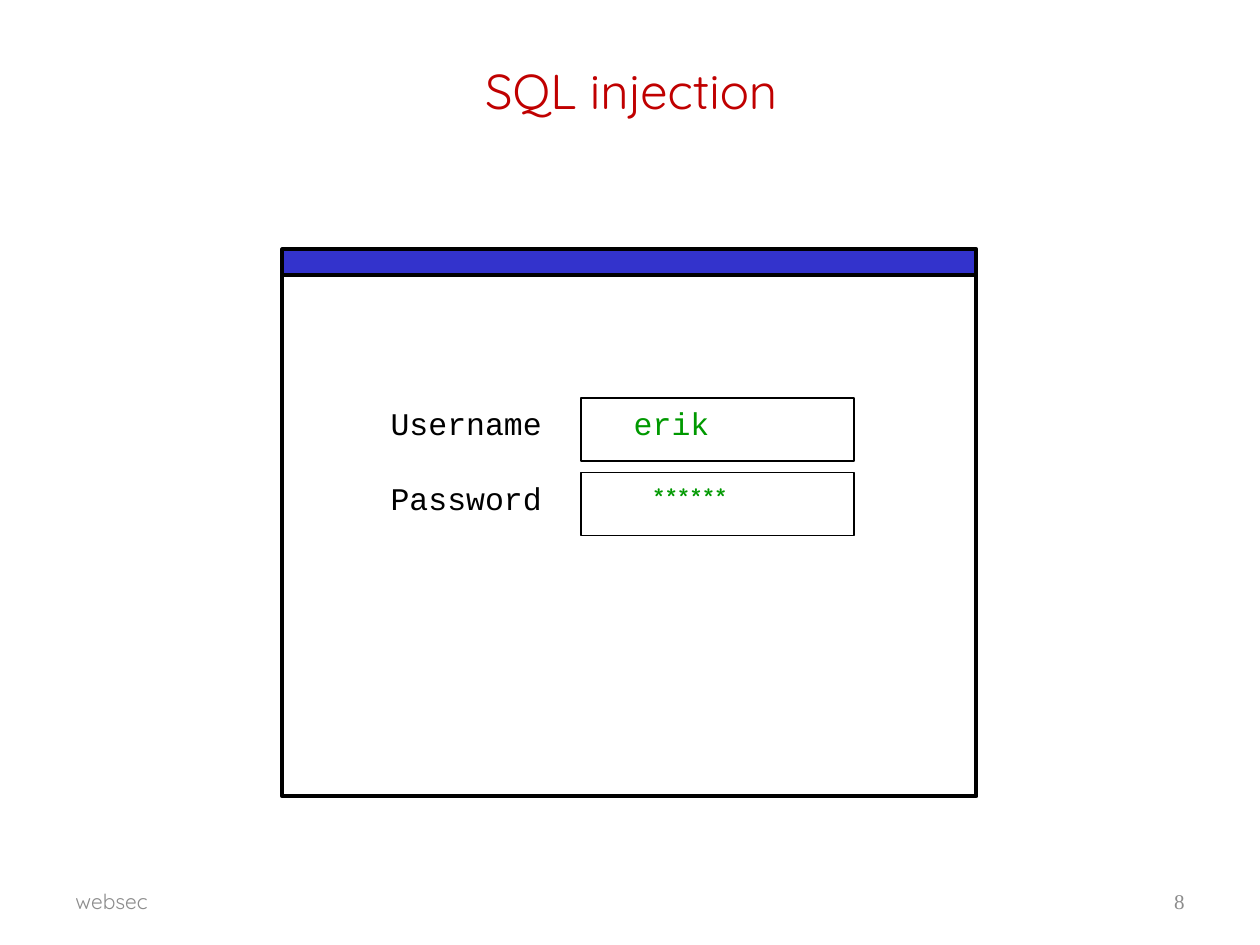
from pptx import Presentation
from pptx.dml.color import RGBColor
from pptx.enum import shapes, text
from pptx.util import Inches, Pt

BLACK, GREY, GREEN = "000000", "8C8C8C", "009900"
LEFT, CENTER, RIGHT = text.PP_ALIGN.LEFT, text.PP_ALIGN.CENTER, text.PP_ALIGN.RIGHT
TOP, MIDDLE = text.MSO_ANCHOR.TOP, text.MSO_ANCHOR.MIDDLE


def color(hex_value):
    """Turn a hex string into a colour."""
    return RGBColor.from_string(hex_value)


def write(shape, words, font, size, ink, align=LEFT, anchor=MIDDLE, wrap=True, indent=0.1):
    """Set and format the single line of text in a shape."""
    frame = shape.text_frame
    frame.text = words
    frame.word_wrap = wrap
    frame.vertical_anchor = anchor
    frame.margin_left = Inches(indent)
    line = frame.paragraphs[0]
    line.alignment = align
    style = line.runs[0].font
    style.name, style.size, style.color.rgb = font, Pt(size), color(ink)


def add_text(slide, box, words, font, size, ink, **layout):
    """Add a text box at left, top, width, height."""
    label = slide.shapes.add_textbox(*map(Inches, box))
    write(label, words, font, size, ink, **layout)


def add_box(slide, box, line_width, fill=None):
    """Add a black-edged rectangle, filled or empty."""
    panel = slide.shapes.add_shape(shapes.MSO_SHAPE.RECTANGLE, *map(Inches, box))
    panel.shadow.inherit = False
    if fill:
        panel.fill.solid()
        panel.fill.fore_color.rgb = color(fill)
    else:
        panel.fill.background()
    panel.line.color.rgb = color(BLACK)
    panel.line.width = Pt(line_width)
    return panel


def add_login_row(slide, top, prompt, entry, entry_font, indent):
    """Add a prompt and the field holding its entry."""
    add_text(slide, (2.8, top, 1.8, 0.5), prompt, "Courier New", 18, BLACK,
             align=CENTER, anchor=TOP, wrap=False)
    field = add_box(slide, (4.61, top, 2.17, 0.5), 1)
    write(field, entry, entry_font, 18, GREEN, anchor=TOP, indent=indent)


def main():
    """Build the login window slide."""
    deck = Presentation()
    deck.slide_width, deck.slide_height = Inches(10), Inches(7.5)
    slide = deck.slides.add_slide(deck.slide_layouts[6])

    add_text(slide, (0.51, 0.21, 9, 1.01), "SQL injection", "Quicksand", 28, "C00000",
             align=CENTER)
    add_text(slide, (7.17, 6.95, 2.33, 0.4), "8", "Times New Roman", 12, GREY, align=RIGHT)

    add_box(slide, (2.24, 2.18, 5.51, 4.14), 2.25, "FFFFFF")
    add_box(slide, (2.24, 1.98, 5.51, 0.2), 2.25, "3333CC")
    add_login_row(slide, 3.16, "Username", "erik", "Courier New", 0.42)
    add_login_row(slide, 3.75, "Password", "******", "Comic Neue", 0.57)

    add_text(slide, (0.5, 6.95, 2.33, 0.4), "websec", "Quicksand", 12, GREY)
    deck.save("out.pptx")


if __name__ == "__main__":
    main()
